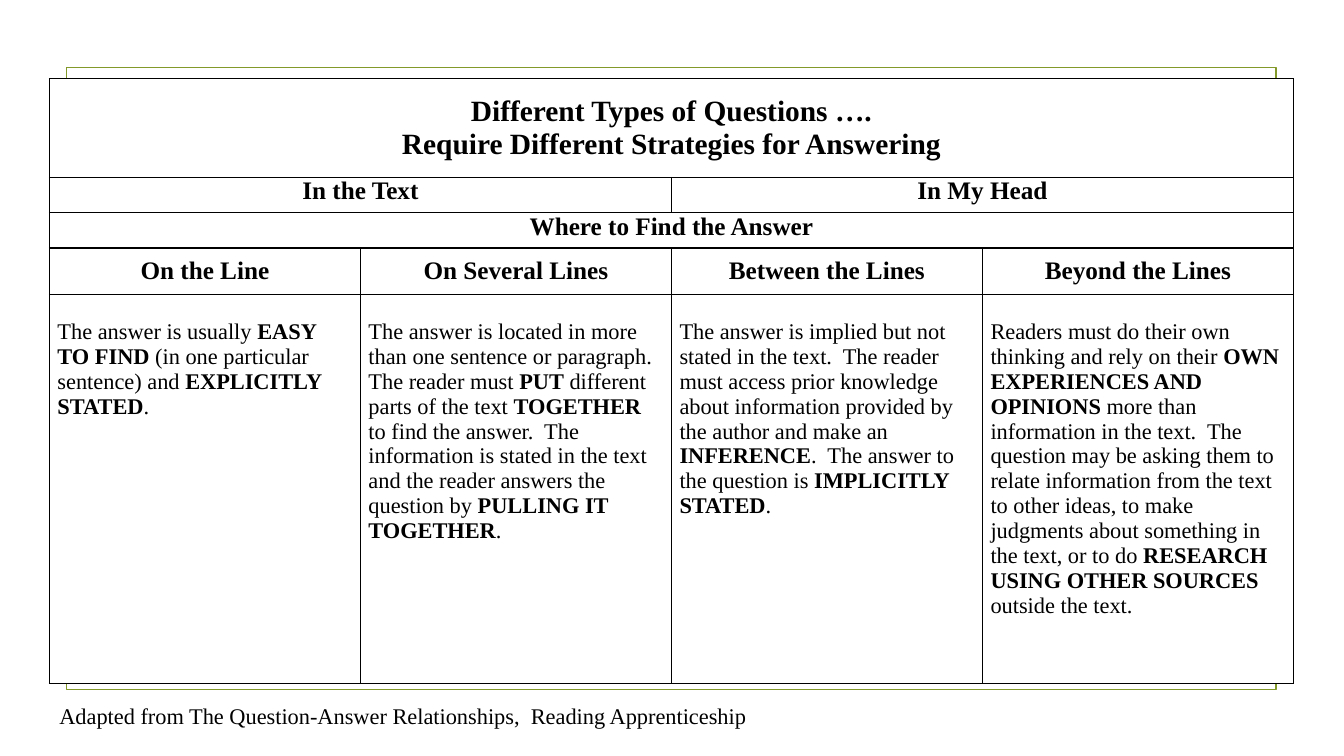
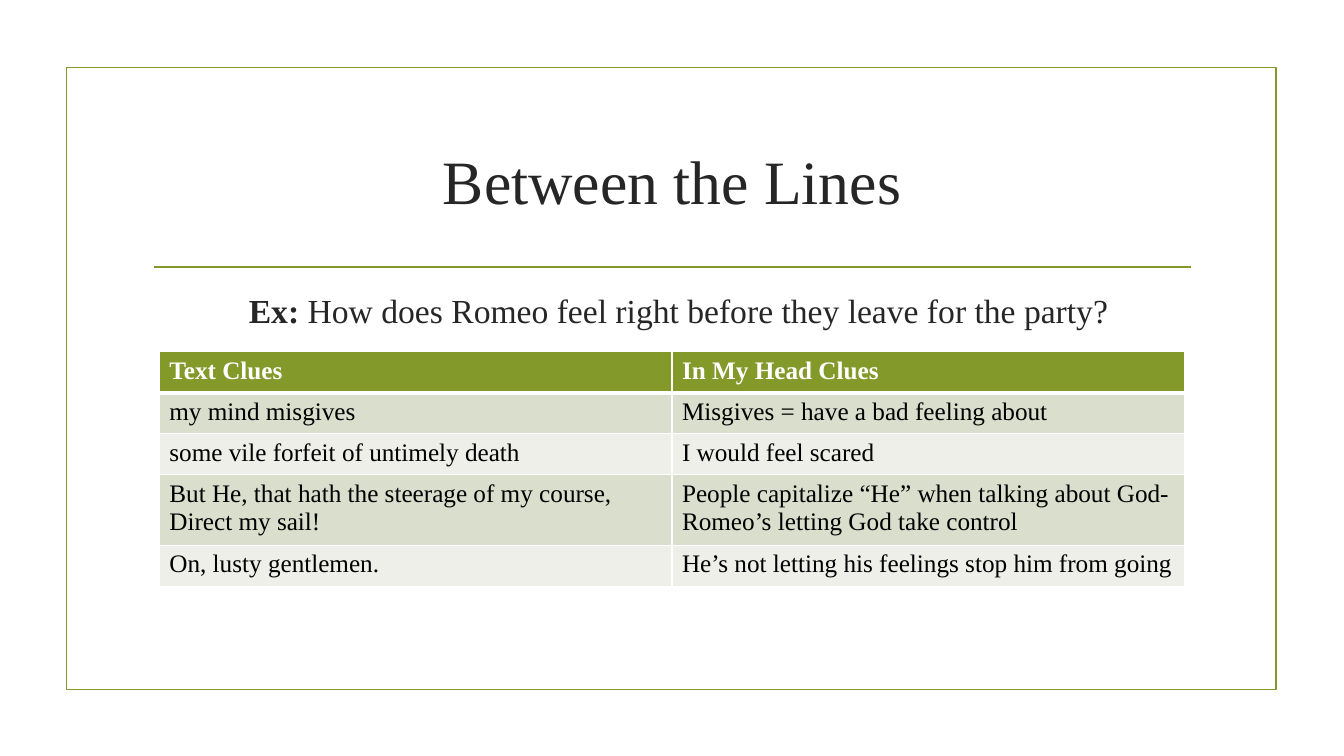
from dataclasses import dataclass
from typing import Optional

from lxml.etree import SubElement
from pptx import Presentation
from pptx.dml.color import RGBColor
from pptx.enum.shapes import MSO_CONNECTOR, MSO_SHAPE
from pptx.enum.text import MSO_ANCHOR, PP_ALIGN
from pptx.oxml.ns import qn
from pptx.util import Inches, Pt

FONT = "Times New Roman"
GREEN, BLACK, WHITE, CHARCOAL = "83992A", "000000", "FFFFFF", "262626"
BANDS = ("D9DECD", "EDEFE8")


@dataclass(frozen=True)
class TextStyle:
    size: float
    color: str = BLACK
    align: PP_ALIGN = PP_ALIGN.LEFT
    bold: bool = False


@dataclass(frozen=True)
class CellStyle:
    text: TextStyle
    fill: str = WHITE
    anchor: MSO_ANCHOR = MSO_ANCHOR.TOP
    side_margin: float = 0.1
    top_margin: float = 0.05
    bottom_margin: float = 0.05


@dataclass(frozen=True)
class Border:
    color: str
    width: float = 1
    top: Optional[float] = None
    bottom: Optional[float] = None


@dataclass(frozen=True)
class TableRow:
    height: float
    texts: tuple[str, ...]
    style: CellStyle
    border: Border


CENTERED = PP_ALIGN.CENTER
TITLE = TextStyle(44, CHARCOAL, CENTERED)
EXAMPLE = TextStyle(24, CHARCOAL, CENTERED)
SOURCE = TextStyle(16)

HEADING = TextStyle(18, align=CENTERED, bold=True)
GRID_TITLE_CELL = CellStyle(TextStyle(21, align=CENTERED, bold=True), WHITE, MSO_ANCHOR.MIDDLE, 0.08, 0, 0)
GROUP_CELL = CellStyle(HEADING, WHITE, MSO_ANCHOR.TOP, 0.08, 0, 0)
HEADING_CELL = CellStyle(HEADING, WHITE, MSO_ANCHOR.MIDDLE, 0.08, 0, 0)
ANSWER_CELL = CellStyle(TextStyle(16), WHITE, MSO_ANCHOR.TOP, 0.08, 0.25, 0)
CLUE_HEADER_CELL = CellStyle(TextStyle(18, WHITE, bold=True), GREEN)
CLUE_CELLS = [CellStyle(TextStyle(18), band) for band in BANDS]

GRID_BORDER = Border(BLACK)
CLUE_BORDER = Border(WHITE)

# Each row spreads its texts evenly over the four columns.
QUESTION_ROWS = (
    TableRow(0.98, ("Different Types of Questions ….\nRequire Different Strategies for Answering",),
             GRID_TITLE_CELL, GRID_BORDER),
    TableRow(0.35, ("In the Text", "In My Head"), GROUP_CELL, GRID_BORDER),
    TableRow(0.35, ("Where to Find the Answer",), GROUP_CELL, GRID_BORDER),
    TableRow(0.46, ("On the Line", "On Several Lines", "Between the Lines", "Beyond the Lines"),
             HEADING_CELL, GRID_BORDER),
    TableRow(3.86, (
        "The answer is usually **EASY TO FIND** (in one particular sentence) and "
        "**EXPLICITLY STATED**.",
        "The answer is located in more than one sentence or paragraph.  The reader must **PUT** "
        "different parts of the text **TOGETHER** to find the answer.  The information is stated "
        "in the text and the reader answers the question by **PULLING IT TOGETHER**.",
        "The answer is implied but not stated in the text.  The reader must access prior knowledge "
        "about information provided by the author and make an **INFERENCE**.  The answer to the "
        "question is **IMPLICITLY STATED**.",
        "Readers must do their own thinking and rely on their **OWN EXPERIENCES AND OPINIONS** more "
        "than information in the text.  The question may be asking them to relate information from "
        "the text to other ideas, to make judgments about something in the text, or to do "
        "**RESEARCH USING OTHER SOURCES** outside the text.",
    ), ANSWER_CELL, GRID_BORDER),
)

CLUE_ROWS = (
    TableRow(0.41, ("Text Clues", "In My Head Clues"), CLUE_HEADER_CELL, Border(WHITE, bottom=3)),
    TableRow(0.38, ("my mind misgives", "Misgives = have a bad feeling about"),
             CLUE_CELLS[0], Border(WHITE, top=3)),
    TableRow(0.41, ("some vile forfeit of untimely death", "I would feel scared"),
             CLUE_CELLS[1], CLUE_BORDER),
    TableRow(0.65, ("But He, that hath the steerage of my course,\nDirect my sail!",
                    "People capitalize “He” when talking about God- Romeo’s letting God take control"),
             CLUE_CELLS[0], CLUE_BORDER),
    TableRow(0.41, ("On, lusty gentlemen.", "He’s not letting his feelings stop him from going"),
             CLUE_CELLS[1], CLUE_BORDER),
)


def rgb(color: str) -> RGBColor:
    return RGBColor.from_string(color)


def write_text(frame, text: str, style: TextStyle) -> None:
    """Write one paragraph per line; parts between double asterisks are bold."""
    for index, line in enumerate(text.split("\n")):
        para = frame.add_paragraph() if index else frame.paragraphs[0]
        para.alignment = style.align
        for part_index, part in enumerate(line.split("**")):
            if not part:
                continue
            span = para.add_run()
            span.text = part
            span.font.name = FONT
            span.font.size = Pt(style.size)
            span.font.bold = style.bold or part_index % 2 == 1
            span.font.color.rgb = rgb(style.color)


def add_text(page, left: float, top: float, width: float, height: float, text: str,
             style: TextStyle, anchor: MSO_ANCHOR = MSO_ANCHOR.TOP) -> None:
    box = page.shapes.add_textbox(Inches(left), Inches(top), Inches(width), Inches(height))
    box.text_frame.word_wrap = True
    box.text_frame.vertical_anchor = anchor
    write_text(box.text_frame, text, style)


def add_framed_page(deck):
    page = deck.slides.add_slide(deck.slide_layouts[6])
    frame = page.shapes.add_shape(MSO_SHAPE.RECTANGLE, Inches(0.66), Inches(0.67), Inches(12), Inches(6.17))
    frame.shadow.inherit = False
    frame.fill.background()
    frame.line.color.rgb = rgb(GREEN)
    frame.line.width = Pt(1.25)
    return page


def add_title(page, text: str) -> None:
    """Add the slide title with the green rule under it."""
    add_text(page, 1.42, 1.07, 10.5, 1.43, text, TITLE, MSO_ANCHOR.MIDDLE)
    rule = page.shapes.add_connector(MSO_CONNECTOR.STRAIGHT, Inches(1.53), Inches(2.65),
                                     Inches(11.81), Inches(2.65))
    rule.line.color.rgb = rgb(GREEN)
    rule.line.width = Pt(1.25)
    SubElement(rule.element.spPr, qn("a:effectLst"))


def set_borders(cell, border: Border) -> None:
    properties = cell._tc.get_or_add_tcPr()
    widths = {"L": border.width, "R": border.width,
              "T": border.top or border.width, "B": border.bottom or border.width}
    for side, width in widths.items():
        line = SubElement(properties, qn(f"a:ln{side}"), w=str(Pt(width)))
        SubElement(SubElement(line, qn("a:solidFill")), qn("a:srgbClr"), val=border.color)


def style_cell(cell, style: CellStyle, border: Border) -> None:
    set_borders(cell, border)
    cell.fill.solid()
    cell.fill.fore_color.rgb = rgb(style.fill)
    cell.vertical_anchor = style.anchor
    cell.margin_left = cell.margin_right = Inches(style.side_margin)
    cell.margin_top = Inches(style.top_margin)
    cell.margin_bottom = Inches(style.bottom_margin)


def add_grid(page, left: float, top: float, width: float, column_count: int,
             rows: tuple[TableRow, ...]) -> None:
    height = sum(row.height for row in rows)
    table = page.shapes.add_table(len(rows), column_count, Inches(left), Inches(top),
                                  Inches(width), Inches(height)).table
    table.first_row = table.horz_banding = False
    for row_index, row in enumerate(rows):
        table.rows[row_index].height = Inches(row.height)
        for column in range(column_count):
            style_cell(table.cell(row_index, column), row.style, row.border)
        span = column_count // len(row.texts)
        for text_index, text in enumerate(row.texts):
            first = text_index * span
            cell = table.cell(row_index, first)
            if span > 1:
                cell.merge(table.cell(row_index, first + span - 1))
            write_text(cell.text_frame, text, row.style.text)


def build_question_types(deck) -> None:
    page = add_framed_page(deck)
    add_grid(page, 0.49, 0.78, 12.34, 4, QUESTION_ROWS)
    add_text(page, 0.49, 6.92, 9.05, 0.37,
             "Adapted from The Question-Answer Relationships,  Reading Apprenticeship", SOURCE)


def build_between_the_lines(deck) -> None:
    page = add_framed_page(deck)
    add_title(page, "Between the Lines")
    add_text(page, 1.54, 2.83, 10.38, 0.5,
             "**Ex:** How does Romeo feel right before they leave for the party?", EXAMPLE)
    add_grid(page, 1.58, 3.49, 10.17, 2, CLUE_ROWS)


def main() -> None:
    deck = Presentation()
    deck.slide_width, deck.slide_height = Inches(13.33), Inches(7.5)
    build_question_types(deck)
    build_between_the_lines(deck)
    deck.save("out.pptx")


if __name__ == "__main__":
    main()
